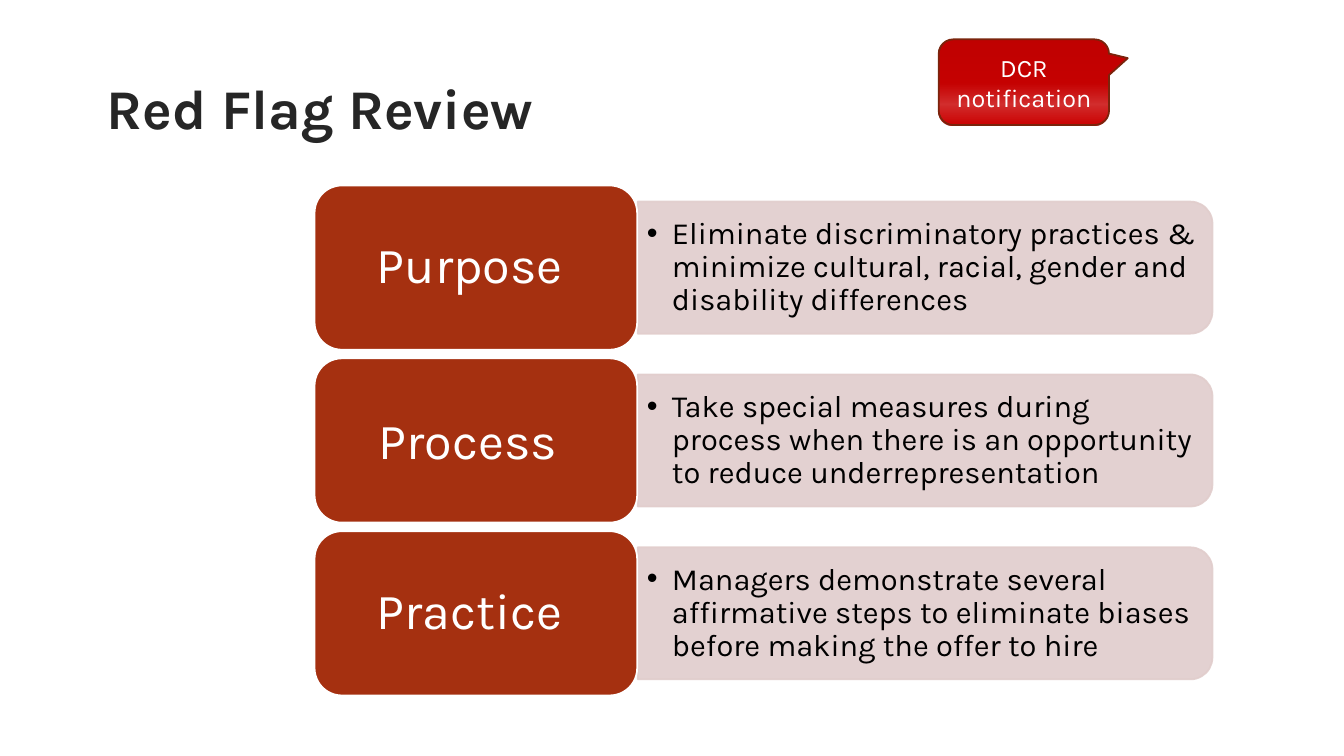
from lxml.etree import SubElement
from pptx import Presentation
from pptx.dml.color import RGBColor
from pptx.enum.shapes import MSO_SHAPE as Shape
from pptx.enum.text import MSO_ANCHOR as Anchor, MSO_AUTO_SIZE as AutoSize, PP_ALIGN as Align
from pptx.oxml.ns import qn
from pptx.util import Inches, Pt

COLORS = {"title": "262626", "label": "A53010", "band": "E1CDCC", "white": "FFFFFF",
          "black": "000000", "callout_edge": "7A240C"}
# position %, color, opacity %
CALLOUT_STOPS = [(0, "C00000", 100), (50, "C60000", 100), (75, "C90000", 82), (100, "CC0000", 100)]

# heading, size and font of the space after it, description
ROWS = [
    ("Purpose", 36, "Karla",
     "Eliminate discriminatory practices & minimize cultural, racial, gender and disability differences"),
    ("Process", 42, "Quicksand",
     "Take special measures during process when there is an opportunity to reduce underrepresentation"),
    ("Practice", 32, "Quicksand",
     "Managers demonstrate several affirmative steps to eliminate biases before making the offer to hire"),
]
ROW_TOP, ROW_PITCH = 1.84, 1.715
LABEL_LEFT, LABEL_WIDTH, LABEL_HEIGHT = 3.12, 3.2, 1.63
BAND_LEFT, BAND_WIDTH, BAND_HEIGHT = 6.325, 5.7, 1.31


def write(holder, text, size, color, bold=False, align=Align.CENTER, anchor=Anchor.MIDDLE,
          margins=(0.1, 0.05), spacing=1.0, font="Karla"):
    """Add a formatted run to the first paragraph of holder and return the paragraph."""
    frame = holder.text_frame
    frame.word_wrap = True
    frame.auto_size = AutoSize.NONE
    frame.vertical_anchor = anchor
    frame.margin_left = frame.margin_right = Inches(margins[0])
    frame.margin_top = frame.margin_bottom = Inches(margins[1])
    paragraph = frame.paragraphs[0]
    paragraph.alignment = align
    paragraph.line_spacing = spacing
    run = paragraph.add_run()
    run.text = text
    run.font.size = Pt(size)
    run.font.name = font
    run.font.bold = bold
    run.font.color.rgb = RGBColor.from_string(COLORS[color])
    return paragraph


def add_block(kind, left, top, width, height, fill, edge):
    block = slide.shapes.add_shape(kind, Inches(left), Inches(top), Inches(width), Inches(height))
    block.shadow.inherit = False
    block.fill.solid()
    block.fill.fore_color.rgb = RGBColor.from_string(COLORS[fill])
    block.line.color.rgb = RGBColor.from_string(COLORS[edge])
    block.line.width = Pt(1.25)
    return block


deck = Presentation()
deck.slide_width, deck.slide_height = Inches(13.33), Inches(7.5)
slide = deck.slides.add_slide(deck.slide_layouts[5])

title = slide.shapes.title
title.left, title.top, title.width, title.height = map(Inches, (0.96, 0.68, 11.48, 1.4))
write(title, "Red Flag Review", 40, "title", bold=True, align=Align.LEFT, anchor=Anchor.TOP)

for index, (heading, gap_size, gap_font, description) in enumerate(ROWS):
    top = ROW_TOP + index * ROW_PITCH
    middle = top + LABEL_HEIGHT / 2

    # The band stands upright before its quarter turn
    band = add_block(Shape.ROUND_2_SAME_RECTANGLE,
                     BAND_LEFT + (BAND_WIDTH - BAND_HEIGHT) / 2, middle - BAND_WIDTH / 2,
                     BAND_HEIGHT, BAND_WIDTH, "band", "band")
    band.rotation = 90
    for color in band.element.spPr.iter(qn("a:srgbClr")):
        SubElement(color, qn("a:alpha"), val="90000")

    detail = slide.shapes.add_textbox(Inches(BAND_LEFT), Inches(middle - 0.59),
                                      Inches(5.63), Inches(1.18))
    bullet = write(detail, description, 22, "black", align=Align.LEFT,
                   margins=(0.09, 0.05), spacing=0.9)
    properties = bullet._p.get_or_add_pPr()
    properties.set("marL", str(Inches(0.25)))
    properties.set("indent", str(-Inches(0.25)))
    SubElement(properties, qn("a:buFont"), typeface="Arial")
    SubElement(properties, qn("a:buChar"), char="•")

    label = add_block(Shape.ROUNDED_RECTANGLE, LABEL_LEFT, top, LABEL_WIDTH, LABEL_HEIGHT,
                      "label", "white")
    label_format = {"margins": (0.23, 0.15), "spacing": 0.9}
    write(label, heading, 36, "white", **label_format)
    write(label, " ", gap_size, "white", font=gap_font, **label_format)

callout = add_block(Shape.ROUNDED_RECTANGULAR_CALLOUT, 9.31, 0.39, 1.69, 0.85,
                    "label", "callout_edge")
for index, value in enumerate((0.61, -0.28, 0.17)):
    callout.adjustments[index] = value
callout.fill.gradient()
callout.fill.gradient_angle = 270
stops = callout.element.spPr.find(".//" + qn("a:gsLst"))
for stop in list(stops):
    stops.remove(stop)
for position, shade, opacity in CALLOUT_STOPS:
    stop = SubElement(stops, qn("a:gs"), pos=str(position * 1000))
    color = SubElement(stop, qn("a:srgbClr"), val=shade)
    if opacity < 100:
        SubElement(color, qn("a:alpha"), val=str(opacity * 1000))
write(callout, "DCR notification", 18, "white")

deck.save("out.pptx")
